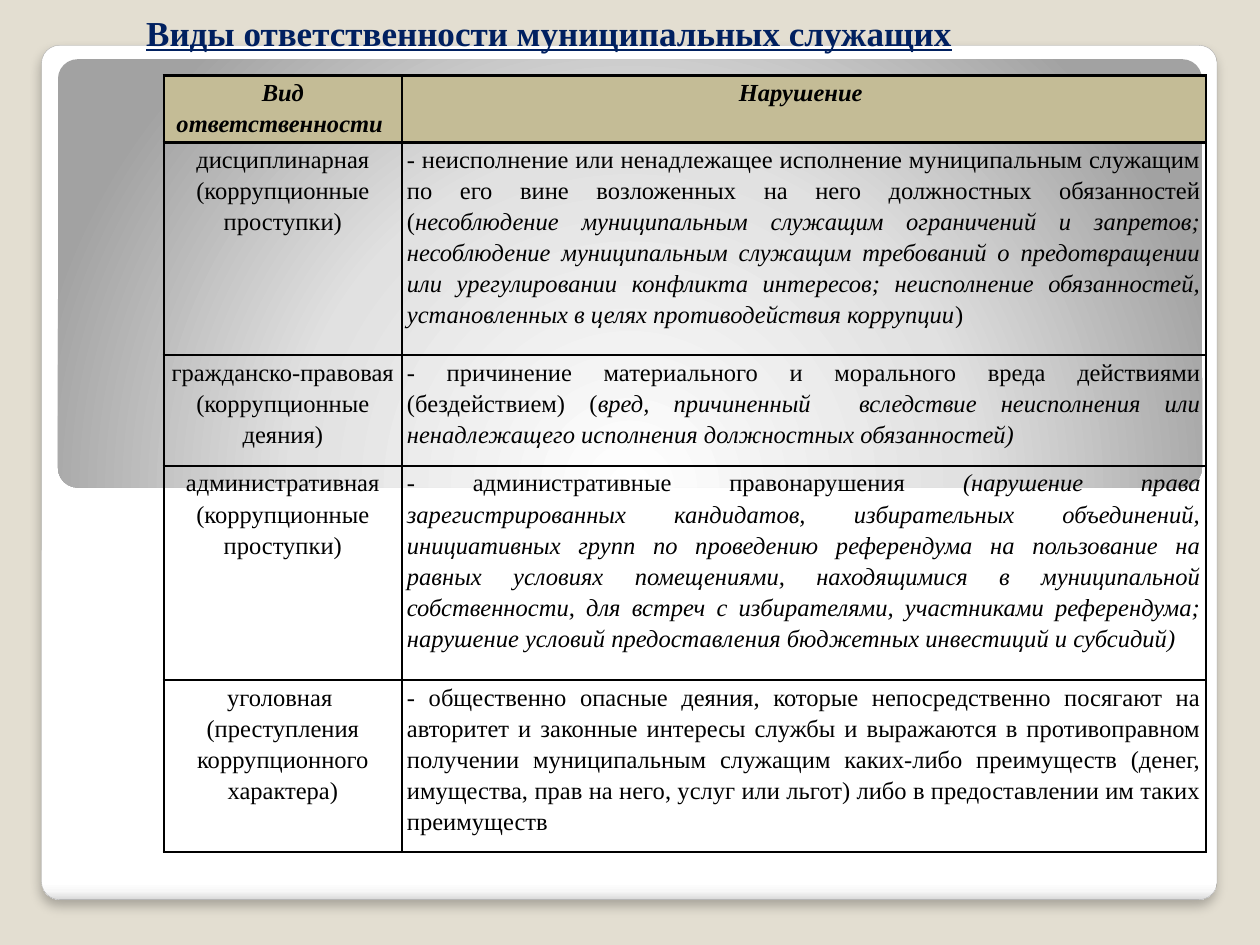
from lxml.etree import SubElement
from pptx import Presentation
from pptx.dml.color import RGBColor
from pptx.enum.shapes import MSO_SHAPE
from pptx.enum.text import MSO_ANCHOR, PP_ALIGN
from pptx.oxml import parse_xml
from pptx.oxml.ns import nsdecls, qn
from pptx.util import Inches, Pt

FONT = "Times New Roman"
BEIGE = RGBColor(0xE3, 0xDE, 0xD1)
KHAKI = RGBColor(0xC4, 0xBC, 0x96)
NAVY = RGBColor(0x00, 0x20, 0x60)
GREY = RGBColor(0xA4, 0xA4, 0xA4)
BLACK = RGBColor(0x00, 0x00, 0x00)

TITLE = "Виды ответственности муниципальных служащих"
HEADERS = ["Вид ответственности ", "Нарушение "]
# Each row: paragraphs of the first cell, then (text, italic) runs of the second
ROWS = [
    (["дисциплинарная (коррупционные проступки)"],
     [("- неисполнение или ненадлежащее исполнение муниципальным служащим по его вине "
       "возложенных на него должностных обязанностей (", False),
      ("несоблюдение муниципальным служащим ограничений и запретов; несоблюдение "
       "муниципальным служащим требований о предотвращении или урегулировании конфликта "
       "интересов; неисполнение обязанностей, установленных в целях противодействия "
       "коррупции", True),
      (")", False)]),
    (["гражданско-правовая (коррупционные деяния)"],
     [("- причинение материального и морального вреда действиями (бездействием) (", False),
      ("вред, причиненный  вследствие неисполнения или ненадлежащего исполнения "
       "должностных обязанностей)", True)]),
    (["административная", "(коррупционные проступки)"],
     [("- административные правонарушения ", False),
      ("(нарушение права зарегистрированных кандидатов, избирательных объединений, "
       "инициативных групп по проведению референдума на пользование на равных условиях "
       "помещениями, находящимися в муниципальной собственности, для встреч с "
       "избирателями, участниками референдума; нарушение условий предоставления "
       "бюджетных инвестиций и субсидий)", True)]),
    (["уголовная ", "(преступления коррупционного характера)"],
     [("- общественно опасные деяния, которые непосредственно посягают на авторитет и "
       "законные интересы службы и выражаются в противоправном получении муниципальным "
       "служащим каких-либо преимуществ (денег, имущества, прав на него, услуг или льгот) "
       "либо в предоставлении им таких преимуществ", False)]),
]
COL_WIDTHS = [1.89, 6.38]
ROW_HEIGHTS = [0.53, 1.69, 0.88, 1.7, 1.36]

LINEAR = '<a:lin ang="5400000" scaled="0"/>'
CIRCLE = ('<a:path path="circle">'
          '<a:fillToRect l="50000" t="175000" r="50000" b="-75000"/></a:path>')


def add_panel(slide, box, adj, stops, direction):
    """Add a rounded panel with a gradient of (percent, colour) stops."""
    sp = slide.shapes.add_shape(MSO_SHAPE.ROUNDED_RECTANGLE, *map(Inches, box))
    sp.adjustments[0] = adj
    sp.shadow.inherit = False
    sp.line.fill.background()
    gs = "".join(f'<a:gs pos="{pos * 1000}"><a:srgbClr val="{color}"/></a:gs>'
                 for pos, color in stops)
    grad = parse_xml(f'<a:gradFill {nsdecls("a")} rotWithShape="1">'
                     f'<a:gsLst>{gs}</a:gsLst>{direction}</a:gradFill>')
    sp.element.spPr.find(qn("a:prstGeom")).addnext(grad)
    return sp


def add_shadow(sp):
    effects = sp.element.spPr.find(qn("a:effectLst"))
    effects.append(parse_xml(
        f'<a:outerShdw {nsdecls("a")} blurRad="{Pt(6)}" dist="{Pt(4)}" dir="5400000" '
        'algn="tl" rotWithShape="0"><a:srgbClr val="000000">'
        '<a:alpha val="25000"/></a:srgbClr></a:outerShdw>'))


def add_run(p, text, size, color, bold=False, italic=False):
    r = p.add_run()
    r.text = text
    f = r.font
    f.name, f.size, f.bold, f.italic = FONT, Pt(size), bold, italic
    f.color.rgb = color
    return r


def set_borders(cell):
    tc_pr = cell._tc.get_or_add_tcPr()
    for side in ("lnL", "lnR", "lnT", "lnB"):
        ln = SubElement(tc_pr, qn(f"a:{side}"), w=str(Pt(1.5)))
        fill = SubElement(ln, qn("a:solidFill"))
        SubElement(fill, qn("a:srgbClr"), val=str(BLACK))


def fill_cell(cell, paragraphs, align, fill=None, bold=False):
    """Write paragraphs, each a list of (text, italic) runs, into a bordered cell."""
    cell.margin_left = cell.margin_right = Inches(0.04)
    cell.margin_top = cell.margin_bottom = 0
    set_borders(cell)
    if fill is None:
        cell.fill.background()
    else:
        cell.fill.solid()
        cell.fill.fore_color.rgb = fill
    tf = cell.text_frame
    for i, runs in enumerate(paragraphs):
        p = tf.add_paragraph() if i else tf.paragraphs[0]
        p.alignment = align
        p.line_spacing = 1.15
        for text, italic in runs:
            add_run(p, text, 14, BLACK, bold, italic)


def add_title(slide, behind):
    title = slide.shapes.title
    behind.element.addnext(title.element)
    title.left, title.top = Inches(1.06), Inches(0.02)
    title.width, title.height = Inches(6.65), Inches(0.74)
    tf = title.text_frame
    tf.word_wrap = False
    tf.vertical_anchor = MSO_ANCHOR.TOP
    tf.margin_top = Inches(0.07)
    p = tf.paragraphs[0]
    p.alignment = PP_ALIGN.LEFT
    add_run(p, TITLE, 20, NAVY, bold=True).font.underline = True


def add_liability_table(slide):
    table = slide.shapes.add_table(
        len(ROW_HEIGHTS), len(COL_WIDTHS), Inches(1.3), Inches(0.6),
        Inches(sum(COL_WIDTHS)), Inches(sum(ROW_HEIGHTS))).table
    table.first_row = table.horz_banding = False
    for col, width in zip(table.columns, COL_WIDTHS):
        col.width = Inches(width)
    for row, height in zip(table.rows, ROW_HEIGHTS):
        row.height = Inches(height)
    for c, text in enumerate(HEADERS):
        fill_cell(table.cell(0, c), [[(text, True)]], PP_ALIGN.CENTER, KHAKI, bold=True)
    for i, (kind, violation) in enumerate(ROWS, start=1):
        fill_cell(table.cell(i, 0), [[(text, False)] for text in kind], PP_ALIGN.CENTER)
        fill_cell(table.cell(i, 1), [violation], PP_ALIGN.JUSTIFY)


def main():
    prs = Presentation()
    prs.slide_width, prs.slide_height = Inches(10), Inches(7.5)
    slide = prs.slides.add_slide(prs.slide_layouts[5])
    slide.background.fill.solid()
    slide.background.fill.fore_color.rgb = BEIGE

    card = add_panel(slide, (0.33, 0.36, 9.33, 6.78), 0.021,
                     [(0, "FFFFFF"), (98, "FFFFFF"), (99, "F7F7F7"), (100, "DADADA")], LINEAR)
    card.line.color.rgb = GREY
    card.line.width = Pt(0.16)
    add_shadow(card)
    band = add_panel(slide, (0.46, 0.47, 9.08, 3.4), 0.046,
                     [(0, "FFFFFF"), (55, "E1E1E1"), (100, "A2A2A2")], CIRCLE)
    add_title(slide, band)
    add_liability_table(slide)
    prs.save("out.pptx")


if __name__ == "__main__":
    main()
